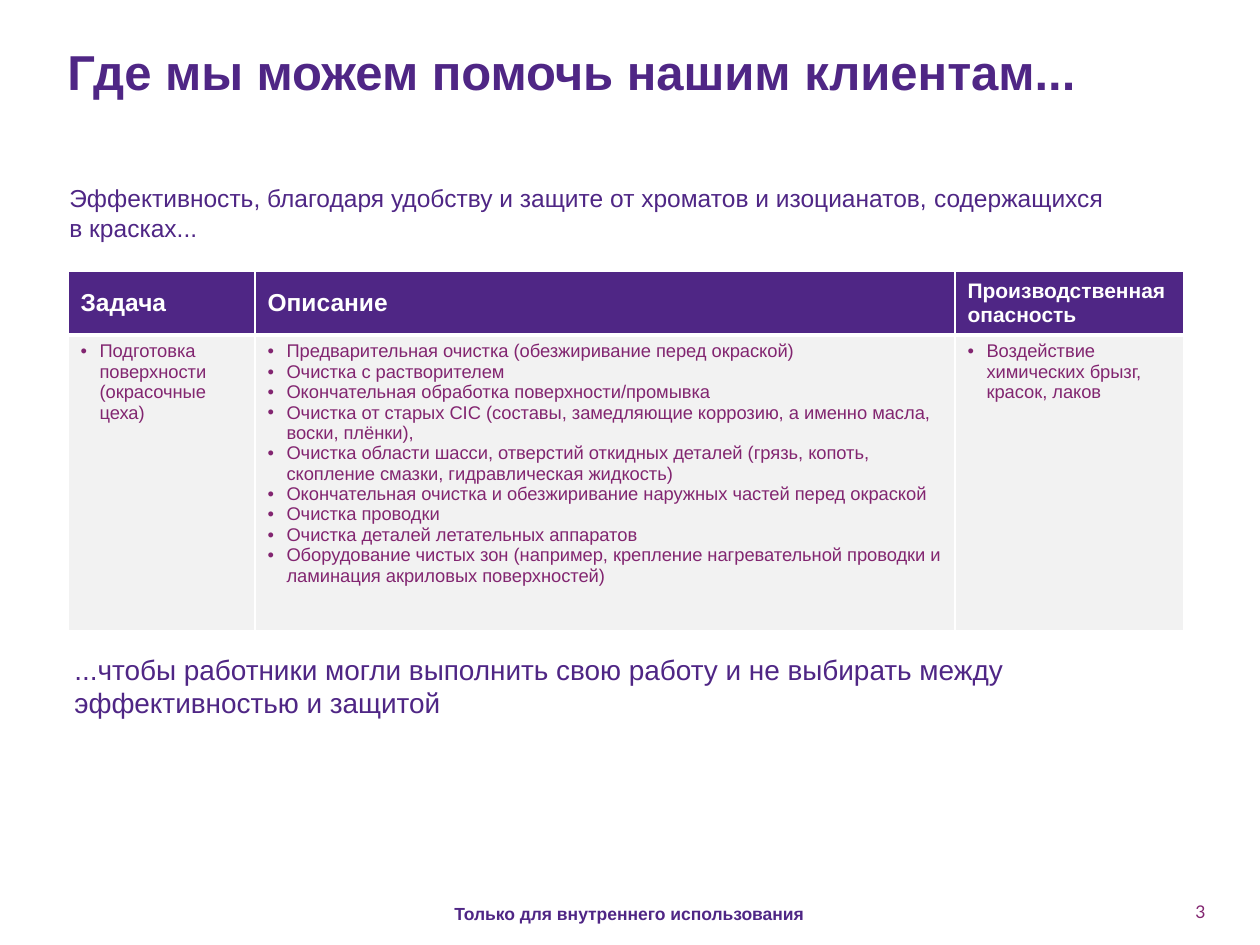
from dataclasses import dataclass

from lxml.etree import SubElement
from pptx import Presentation
from pptx.dml.color import RGBColor as Rgb
from pptx.enum.text import MSO_ANCHOR as Anchor, PP_ALIGN as Align
from pptx.oxml import parse_xml
from pptx.oxml.ns import nsdecls, qn
from pptx.util import Emu, Pt

EMU_PER_PX = 914400 / 126


@dataclass(frozen=True)
class Theme:
    purple: str = "4F2685"
    plum: str = "822570"
    black: str = "000000"
    white: str = "FFFFFF"
    grey: str = "F2F2F2"
    font: str = "Arial"
    number_font: str = "Lato"
    gap_font: str = "Calibri"
    title: float = 28
    closing: float = 16
    intro: float = 14
    heading: float = 14
    small_heading: float = 12
    body: float = 10.5
    footer: float = 10


THEME = Theme()

COLUMN_WIDTHS = (187, 700, 229)
ROW_HEIGHTS = (64, 296)
BULLET_INDENT = 19
HEADINGS = (
    ("Задача", THEME.heading),
    ("Описание", THEME.heading),
    ("Производственная опасность", THEME.small_heading),
)
DETAILS = (
    ("Подготовка поверхности (окрасочные цеха)",),
    (
        "Предварительная очистка (обезжиривание перед окраской)",
        "Очистка с растворителем",
        "Окончательная обработка поверхности/промывка",
        "Очистка от старых CIC (составы, замедляющие коррозию, а именно масла, воски, плёнки),",
        "Очистка области шасси, отверстий откидных деталей "
        "(грязь, копоть, скопление смазки, гидравлическая жидкость)",
        "Окончательная очистка и обезжиривание наружных частей перед окраской",
        "Очистка проводки",
        "Очистка деталей летательных аппаратов",
        "Оборудование чистых зон (например, крепление нагревательной проводки "
        "и ламинация акриловых поверхностей)",
    ),
    ("Воздействие химических брызг, красок, лаков",),
)


def px(length):
    return Emu(round(length * EMU_PER_PX))


def add_run(paragraph, text, size, color=THEME.purple, bold=False, font=THEME.font):
    run = paragraph.add_run()
    run.text = text
    run.font.name = font
    run.font.size = Pt(size)
    run.font.bold = bold
    run.font.color.rgb = Rgb.from_string(color)


def add_text_frame(slide, left, top, width, height, anchor=Anchor.TOP):
    frame = slide.shapes.add_textbox(*map(px, (left, top, width, height))).text_frame
    frame.word_wrap = True
    frame.vertical_anchor = anchor
    return frame


def add_bullet(paragraph):
    props = paragraph._p.get_or_add_pPr()
    props.set("marL", str(px(BULLET_INDENT)))
    props.set("indent", str(px(-BULLET_INDENT)))
    SubElement(props, qn("a:buFont"), typeface=THEME.font)
    SubElement(props, qn("a:buChar"), char="•")


def style_cell(cell, fill, top, bottom):
    cell.fill.solid()
    cell.fill.fore_color.rgb = Rgb.from_string(fill)
    # Border lines must stand before the fill
    borders = {"L": 1, "R": 1, "T": top, "B": bottom}
    for place, (side, width) in enumerate(borders.items()):
        line = parse_xml(
            f'<a:ln{side} {nsdecls("a")} w="{Pt(width)}"><a:solidFill>'
            f'<a:srgbClr val="{THEME.white}"/></a:solidFill></a:ln{side}>'
        )
        cell._tc.get_or_add_tcPr().insert(place, line)


def add_task_table(slide, left, top):
    frame = slide.shapes.add_table(
        len(ROW_HEIGHTS), len(COLUMN_WIDTHS), px(left), px(top),
        px(sum(COLUMN_WIDTHS)), px(sum(ROW_HEIGHTS)),
    )
    table = frame.table
    for row, height in zip(table.rows, ROW_HEIGHTS):
        row.height = px(height)
    for index, width in enumerate(COLUMN_WIDTHS):
        table.columns[index].width = px(width)

        # Heading
        heading = table.cell(0, index)
        style_cell(heading, THEME.purple, top=1, bottom=3)
        heading.vertical_anchor = Anchor.MIDDLE
        text, size = HEADINGS[index]
        add_run(heading.text_frame.paragraphs[0], text, size, THEME.white, bold=True)

        # Bulleted details
        detail = table.cell(1, index)
        style_cell(detail, THEME.grey, top=3, bottom=1)
        body = detail.text_frame
        for number, item in enumerate(DETAILS[index]):
            paragraph = body.add_paragraph() if number else body.paragraphs[0]
            add_bullet(paragraph)
            add_run(paragraph, item, THEME.body, THEME.plum)


def add_intro(slide):
    frame = add_text_frame(slide, 57, 173, 1181, 78)
    first, second = frame.paragraphs[0], frame.add_paragraph()
    first.alignment = second.alignment = Align.JUSTIFY
    add_run(first, "Эффективность, благодаря удобству и защите от хроматов и изоцианатов,",
            THEME.intro)
    add_run(first, " ", THEME.closing, THEME.black, font=THEME.gap_font)
    add_run(first, "содержащихся", THEME.intro)
    add_run(second, "в красках...", THEME.intro)


def add_footer(slide):
    notice = add_text_frame(slide, 428, 895, 402, 35).paragraphs[0]
    notice.alignment = Align.CENTER
    notice.line_spacing = 1.1
    add_run(notice, "Только для внутреннего использования", THEME.footer, bold=True)

    page = add_text_frame(slide, 1183, 895, 67, 50).paragraphs[0]
    add_run(page, "3", THEME.footer, THEME.plum, font=THEME.number_font)


def main():
    deck = Presentation()
    deck.slide_width, deck.slide_height = px(1260), px(945)
    slide = deck.slides.add_slide(deck.slide_layouts[6])

    add_footer(slide)

    # Title
    title = add_text_frame(slide, 55, 32, 1134, 78, Anchor.MIDDLE).paragraphs[0]
    add_run(title, "Где мы можем помочь нашим клиентам...", THEME.title, bold=True)

    add_task_table(slide, 68, 271)

    # Closing statement
    closing = add_text_frame(slide, 62, 646, 1134, 97).paragraphs[0]
    add_run(closing, "...чтобы работники могли выполнить свою работу и не выбирать "
            "между эффективностью и защитой", THEME.closing)

    add_intro(slide)
    deck.save("out.pptx")


if __name__ == "__main__":
    main()
